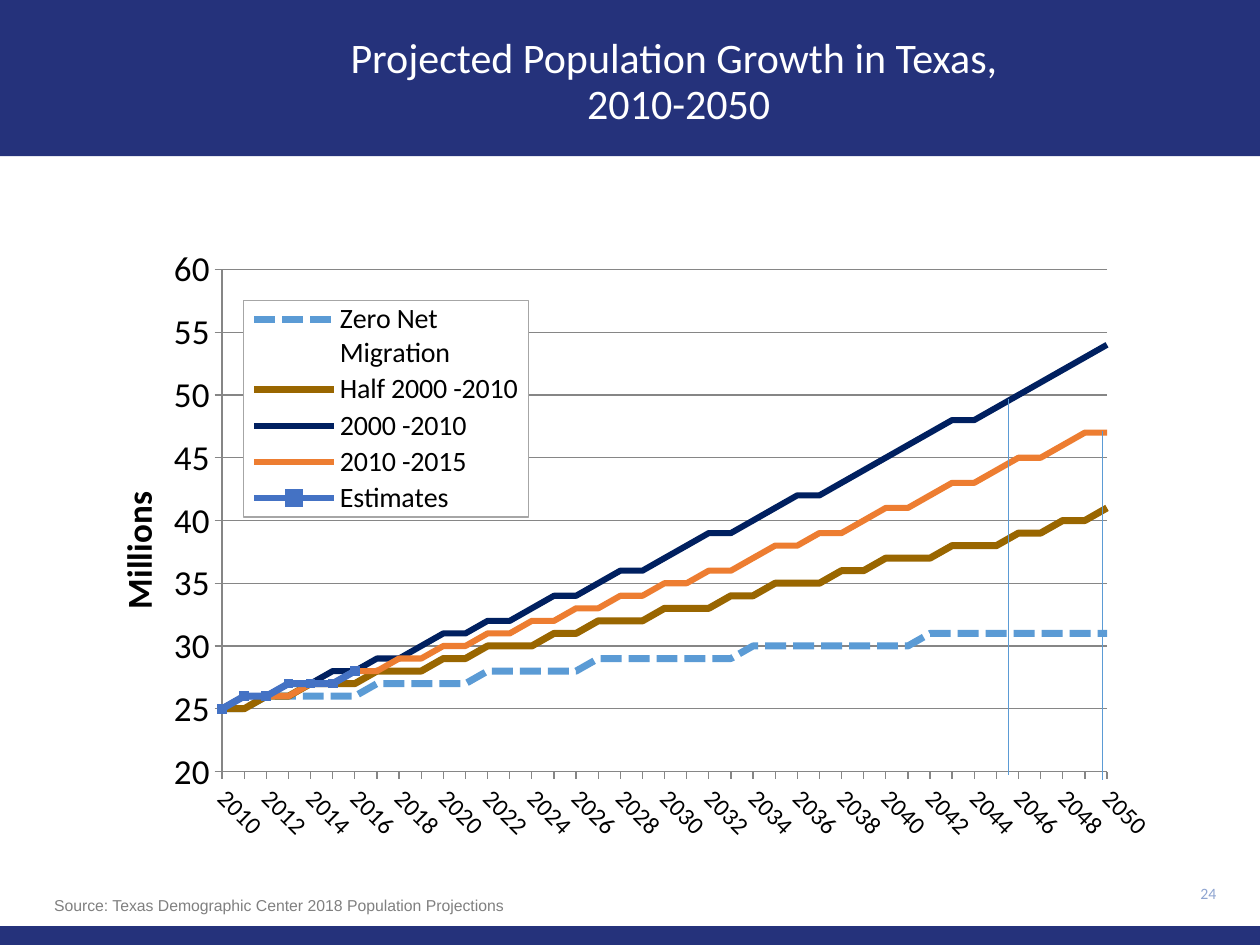
"""Build a slide with a line chart of projected population in Texas."""
from lxml import etree
from pptx import Presentation
from pptx import util as u
from pptx.chart.data import CategoryChartData
from pptx.dml.color import RGBColor
from pptx.enum import chart as ch, dml, shapes, text
from pptx.oxml import parse_xml
from pptx.oxml.ns import nsdecls, qn

NAVY, BLUE, GREY = "25327B", "5B9BD5", "868686"
DASH = dml.MSO_LINE.SQUARE_DOT
SERIES = [
    ("Zero Net Migration", BLUE, 4,
     [25] * 2 + [26] * 5 + [27] * 5 + [28] * 5 + [29] * 7 + [30] * 8 + [31] * 9),
    ("Half 2000 -2010", "996600", 4,
     [25, 25, 26, 26, 27, 27, 27, 28, 28, 28, 29, 29, 30, 30, 30, 31, 31,
      32, 32, 32, 33, 33, 33, 34, 34, 35, 35, 35, 36, 36, 37, 37, 37, 38,
      38, 38, 39, 39, 40, 40, 41]),
    ("2000 -2010", "002060", 3.5,
     [25, 26, 26, 27, 27, 28, 28, 29, 29, 30, 31, 31, 32, 32, 33, 34, 34,
      35, 36, 36, 37, 38, 39, 39, 40, 41, 42, 42, 43, 44, 45, 46, 47, 48,
      48, 49, 50, 51, 52, 53, 54]),
    ("2010 -2015", "ED7D31", 3.5,
     [25, 26, 26, 26, 27, 27, 28, 28, 29, 29, 30, 30, 31, 31, 32, 32, 33,
      33, 34, 34, 35, 35, 36, 36, 37, 38, 38, 39, 39, 40, 41, 41, 42, 43,
      43, 44, 45, 45, 46, 47, 47]),
    ("Estimates", "4472C4", 4, [25, 26, 26, 27, 27, 27, 28]),
]


def put(item, **vals):
    for key, val in vals.items():
        setattr(item, key, val)


def box(*dims):
    return [u.Cm(dim) for dim in dims]


def tint(item, color):
    if hasattr(item, "solid"):
        item.solid()
        item = item.fore_color
    else:
        item = item.color
    item.rgb = RGBColor.from_string(color)


def style(font, size, color="000000", name="Calibri", bold=False):
    put(font, size=u.Pt(size), name=name, bold=bold)
    tint(font, color)


def add_bar(slide, top, high):
    bar = slide.shapes.add_shape(
        shapes.MSO_SHAPE.RECTANGLE, *box(0, top, 25.4, high))
    bar.shadow.inherit = False
    tint(bar.fill, NAVY)
    bar.line.fill.background()


def add_text(slide, dims, words, size, color, name="Calibri",
             anchor=text.MSO_ANCHOR.MIDDLE, **para):
    frame = slide.shapes.add_textbox(*box(*dims)).text_frame
    put(frame, word_wrap=True, vertical_anchor=anchor, text=words)
    line = frame.paragraphs[0]
    put(line, **para)
    for run in line.runs:
        style(run.font, size, color, name)
    return line


def add_line(slide, x, low, high):
    line = slide.shapes.add_connector(
        shapes.MSO_CONNECTOR.STRAIGHT, *box(x, low, x, high))
    line.line.width = u.Pt(0.5)
    tint(line.line, BLUE)
    etree.SubElement(line._element.spPr, qn("a:effectLst"))


def place(node, inner=False, **dims):
    """Give a chart part a fixed place, in shares of the chart."""
    for old in node.findall(qn("c:layout")):
        node.remove(old)
    rows = '<c:layoutTarget val="inner"/>' if inner else ""
    rows += "".join(f'<c:{key}Mode val="edge"/>' for key in "xy")
    rows += "".join(f'<c:{key} val="{val}"/>' for key, val in dims.items())
    part = parse_xml(f'<c:layout {nsdecls("c")}><c:manualLayout>{rows}'
                     '</c:manualLayout></c:layout>')
    heads = [kid for kid in node
             if kid.tag in (qn("c:tx"), qn("c:legendPos"), qn("c:legendEntry"))]
    node.insert(len(heads), part)


def set_axes(chart):
    cat, val = chart.category_axis, chart.value_axis
    for axis, size in ((cat, 14), (val, 20)):
        put(axis, major_tick_mark=ch.XL_TICK_MARK.OUTSIDE,
            minor_tick_mark=ch.XL_TICK_MARK.NONE)
        style(axis.tick_labels.font, size)
        tint(axis.format.line, GREY)
    cat._element.find(qn("c:txPr")).find(qn("a:bodyPr")).set("rot", "2700000")
    skip = parse_xml(f'<c:tickLblSkip {nsdecls("c")} val="2"/>')
    cat._element.find(qn("c:noMultiLvlLbl")).addprevious(skip)
    put(val, minimum_scale=20, maximum_scale=60, major_unit=5,
        has_major_gridlines=True)
    put(val.tick_labels, number_format="0", number_format_is_linked=False)
    tint(val.major_gridlines.format.line, GREY)
    cross = val._element.find(qn("c:crossBetween"))
    if cross is None:
        cross = parse_xml(f'<c:crossBetween {nsdecls("c")}/>')
        val._element.find(qn("c:majorUnit")).addprevious(cross)
    cross.set("val", "midCat")
    title = val.axis_title
    title.text_frame.text = "Millions"
    style(title.text_frame.paragraphs[0].runs[0].font, 20, bold=True)
    place(title._element, x=0.02, y=0.4)


def set_key(chart):
    chart.has_legend = True
    key = chart.legend
    put(key, position=ch.XL_LEGEND_POSITION.LEFT, include_in_layout=True)
    style(key.font, 16)
    place(key._element, x=0.14, y=0.11, w=0.25, h=0.34)
    look = parse_xml(
        f'<c:spPr {nsdecls("c", "a")}><a:solidFill><a:srgbClr val="FFFFFF"/>'
        '</a:solidFill><a:ln w="9525"><a:solidFill><a:srgbClr val="A6A6A6"/>'
        '</a:solidFill></a:ln></c:spPr>')
    key._element.find(qn("c:txPr")).addprevious(look)


def add_chart(slide):
    data = CategoryChartData()
    data.categories = [str(year) for year in range(2010, 2051)]
    for name, _, _, vals in SERIES:
        data.add_series(name, vals + [None] * (41 - len(vals)))
    chart = slide.shapes.add_chart(
        ch.XL_CHART_TYPE.LINE, *box(1.7, 4.65, 22.96, 12.83), data).chart
    chart.has_title = False
    style(chart.font, 20)
    plot = chart.plots[0]
    plot.vary_by_categories = False
    for row, (name, color, width, _) in zip(plot.series, SERIES):
        row.smooth = False
        row.format.line.width = u.Pt(width)
        tint(row.format.line, color)
        row.marker.style = ch.XL_MARKER_STYLE.NONE
        if name == "Estimates":
            put(row.marker, style=ch.XL_MARKER_STYLE.SQUARE, size=5)
            tint(row.marker.format.fill, color)
            tint(row.marker.format.line, color)
    plot.series[0].format.line.dash_style = DASH
    set_axes(chart)
    set_key(chart)
    area = chart._chartSpace.find(qn("c:chart")).find(qn("c:plotArea"))
    place(area, True, x=0.121, y=0.061, w=0.777, h=0.789)


def main():
    deck = Presentation()
    put(deck, slide_width=u.Cm(25.4), slide_height=u.Cm(19.05))
    slide = deck.slides.add_slide(deck.slide_layouts[6])
    add_bar(slide, 0, 3.15)
    add_bar(slide, 18.67, 0.38)
    add_chart(slide)
    add_text(slide, (6.55, 0.64, 14.27, 2.06),
             "Projected Population Growth in Texas, \v2010-2050", 24, "FFFFFF",
             alignment=text.PP_ALIGN.CENTER, line_spacing=0.9)
    add_text(slide, (20.32, 17.63, 4.45, 0.76), "24", 9, "8FA5D1",
             alignment=text.PP_ALIGN.RIGHT)
    add_line(slide, 20.32, 15.62, 8.05)
    add_line(slide, 22.23, 15.72, 8.69)
    note = add_text(
        slide, (0.84, 17.93, 10.36, 0.64),
        "Source: Texas Demographic Center 2018 Population Projections",
        9, "808080", "Arial", text.MSO_ANCHOR.TOP)
    props = note._p.get_or_add_pPr()
    props.set("marL", str(u.Cm(1.65)))
    props.set("indent", str(-u.Cm(1.65)))
    deck.save("out.pptx")


if __name__ == "__main__":
    main()
